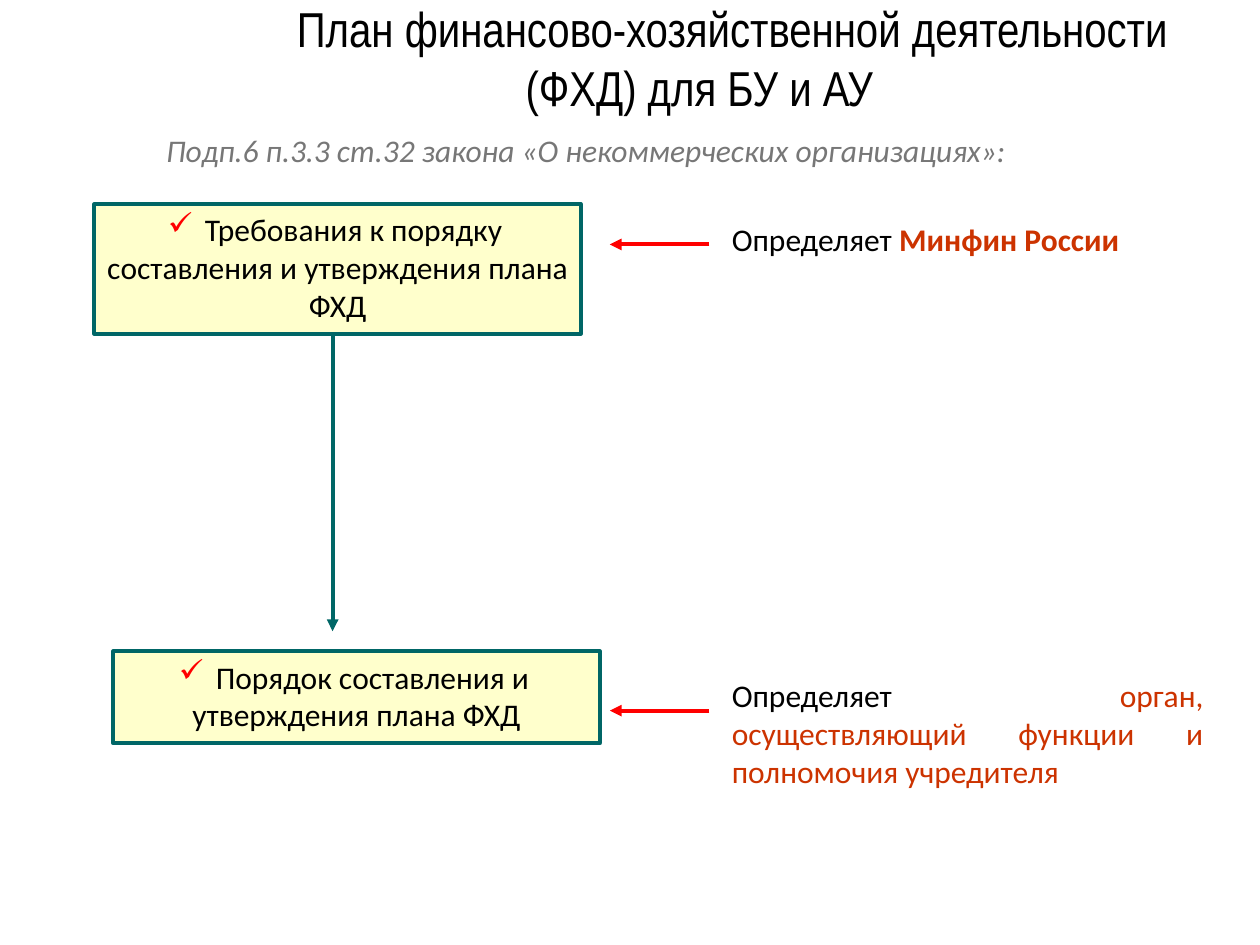
"""Build a slide on who sets the rules for the financial plan."""
from dataclasses import dataclass

from lxml import etree
from pptx import Presentation
from pptx import util as u
from pptx.dml.color import RGBColor
from pptx.enum import shapes, text
from pptx.oxml import ns

BLACK = RGBColor(0x00, 0x00, 0x00)
GRAY = RGBColor(0x77, 0x77, 0x77)
RUST = RGBColor(0xCC, 0x33, 0x00)
RED = RGBColor(0xFF, 0x00, 0x00)
TEAL = RGBColor(0x00, 0x66, 0x66)
CREAM = RGBColor(0xFF, 0xFF, 0xCC)
CENTER = text.PP_ALIGN.CENTER
FULL = text.PP_ALIGN.JUSTIFY


@dataclass(frozen=True)
class Run:
    words: str
    color: RGBColor = BLACK
    bold: bool = False
    slant: bool = False
    font: str = "Calibri"
    size: int = 18


@dataclass(frozen=True)
class Step:
    left: float
    top: float
    high: float
    words: str


@dataclass(frozen=True)
class Label:
    left: float
    top: float
    wide: float
    high: float
    runs: tuple[Run, ...]


@dataclass(frozen=True)
class Arrow:
    start: tuple[float, float]
    end: tuple[float, float]
    color: RGBColor


STEPS = (
    Step(0.9, 5.17, 0.73, " Порядок составления и утверждения плана ФХД"),
    Step(0.75, 1.62, 1.03, " Требования к порядку составления и утверждения плана ФХД"),
)
LABELS = (
    Label(5.71, 5.32, 3.94, 1, (
        Run("Определяет "),
        Run("орган, осуществляющий функции и полномочия учредителя", RUST))),
    Label(5.71, 1.7, 3.94, 0.4, (
        Run("Определяет "), Run("Минфин России", RUST, bold=True))),
    Label(1.22, 0.99, 8.11, 0.4, (
        Run("Подп.6 п.3.3 ст.32 закона «О некоммерческих организациях»:",
            GRAY, slant=True),)),
)
TITLE = Label(1.33, 0, 8.44, 0.91, (
    Run("План финансово-хозяйственной деятельности (ФХД) для БУ и АУ",
        font="Arial Narrow", size=28),))
ARROWS = (
    Arrow((5.63, 1.94), (4.84, 1.94), RED),
    Arrow((5.63, 5.64), (4.84, 5.64), RED),
    Arrow((2.64, 2.65), (2.64, 5.01), TEAL),
)


def write(shape, runs: tuple[Run, ...], align):
    frame = shape.text_frame
    frame.word_wrap = True
    para = frame.paragraphs[0]
    para.alignment = align
    for item in runs:
        run = para.add_run()
        run.text = item.words
        font = run.font
        font.name, font.size = item.font, u.Pt(item.size)
        font.bold, font.italic = item.bold, item.slant
        font.color.rgb = item.color
    return para


def draw_label(slide, item: Label, align=FULL):
    box = slide.shapes.add_textbox(*map(u.Inches, (item.left, item.top, item.wide, item.high)))
    write(box, item.runs, align)
    return box


def draw_title(slide, item: Label) -> None:
    box = draw_label(slide, item, CENTER)
    box.text_frame.vertical_anchor = text.MSO_ANCHOR.MIDDLE
    props = box.text_frame.paragraphs[0]._p.get_or_add_pPr()
    props.set("marL", "0")
    props.set("indent", str(u.Inches(0.52)))


def draw_step(slide, item: Step) -> None:
    box = slide.shapes.add_shape(
        shapes.MSO_SHAPE.RECTANGLE,
        *map(u.Inches, (item.left, item.top, 3.86, item.high)))
    box.shadow.inherit = False
    box.fill.solid()
    box.fill.fore_color.rgb = CREAM
    box.line.color.rgb = TEAL
    box.line.width = u.Pt(2.25)
    frame = box.text_frame
    frame.vertical_anchor = text.MSO_ANCHOR.TOP
    frame.margin_left = frame.margin_right = u.Inches(0.08)
    props = write(box, (Run(item.words),), CENTER)._p.get_or_add_pPr()
    tint = etree.SubElement(props, ns.qn("a:buClr"))
    etree.SubElement(tint, ns.qn("a:srgbClr"), val=str(RED))
    etree.SubElement(props, ns.qn("a:buChar"), char="✓")


def draw_arrow(slide, item: Arrow) -> None:
    line = slide.shapes.add_connector(
        shapes.MSO_CONNECTOR.STRAIGHT, *map(u.Inches, item.start + item.end))
    line.line.color.rgb = item.color
    line.line.width = u.Pt(2.25)
    etree.SubElement(line.line._get_or_add_ln(), ns.qn("a:tailEnd"), type="triangle")
    etree.SubElement(line._element.spPr, ns.qn("a:effectLst"))


def main() -> None:
    deck = Presentation()
    deck.slide_width, deck.slide_height = u.Inches(10), u.Inches(7.5)
    slide = deck.slides.add_slide(deck.slide_layouts[6])
    draw_title(slide, TITLE)
    for step, label in zip(STEPS, LABELS):
        draw_step(slide, step)
        draw_label(slide, label)
    draw_label(slide, LABELS[-1])
    for arrow in ARROWS:
        draw_arrow(slide, arrow)
    deck.save("out.pptx")


if __name__ == "__main__":
    main()
